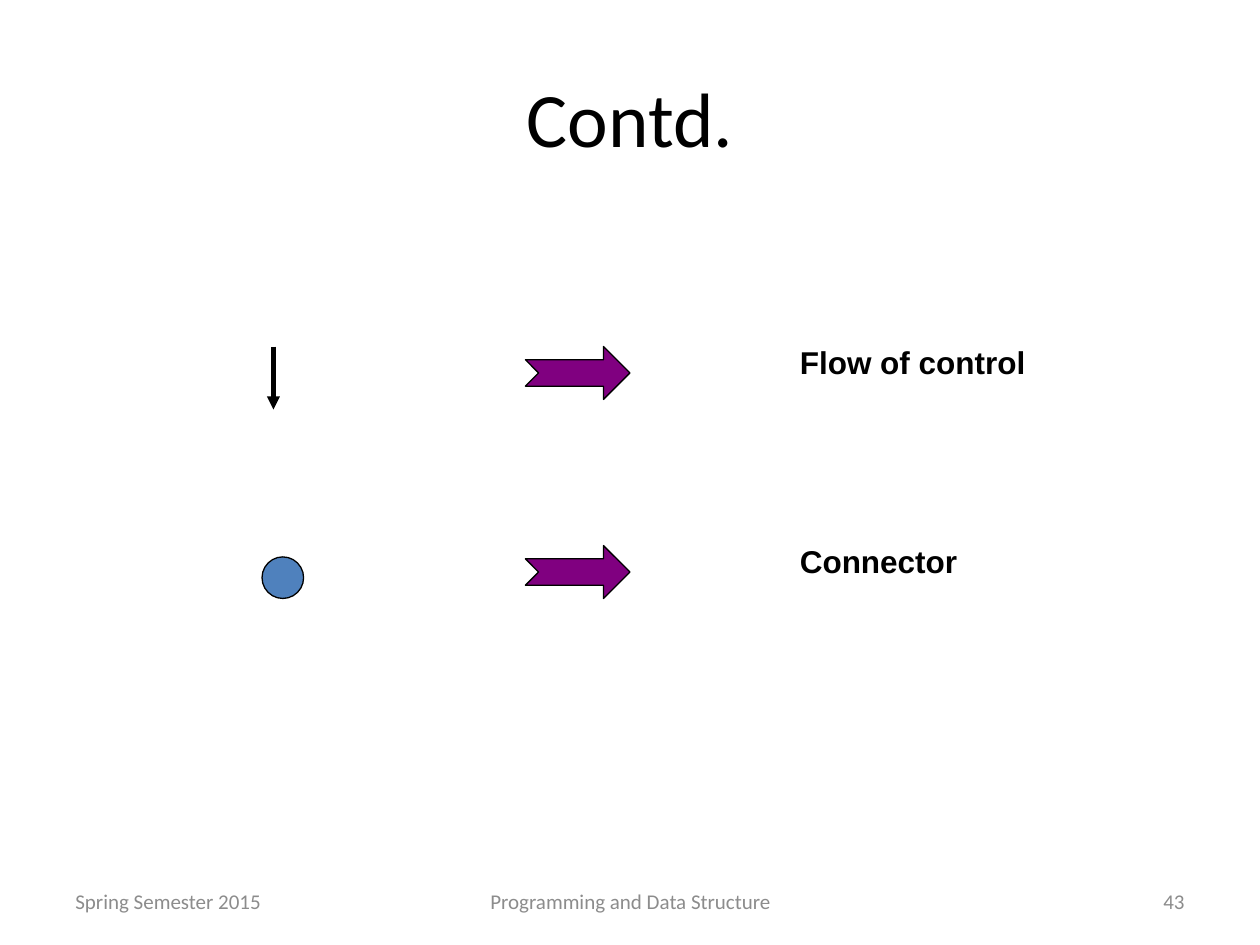
"""Build the flowchart symbols slide: flow of control and connector."""
import pptx
import pptx.dml.color
import pptx.enum.shapes
import pptx.enum.text
import pptx.oxml.ns
import pptx.util
from lxml import etree

Inches = pptx.util.Inches
Pt = pptx.util.Pt
ALIGN = pptx.enum.text.PP_ALIGN
ANCHOR = pptx.enum.text.MSO_ANCHOR
SHAPE = pptx.enum.shapes.MSO_SHAPE
COLORS = {"ink": "000000", "footer": "8C8C8C", "pointer": "800080", "node": "4F81BD"}


def rgb(name):
    """Return the named colour."""
    return pptx.dml.color.RGBColor.from_string(COLORS[name])


def place(shape, left, top, width, height):
    """Move and size a shape, in inches."""
    shape.left, shape.top = Inches(left), Inches(top)
    shape.width, shape.height = Inches(width), Inches(height)


def write(shape, wording, size, font, color="ink", align=ALIGN.LEFT,
          anchor=ANCHOR.TOP, bold=False):
    """Put one formatted paragraph into a shape."""
    frame = shape.text_frame
    frame.text = wording
    frame.word_wrap = True
    frame.vertical_anchor = anchor
    paragraph = frame.paragraphs[0]
    paragraph.alignment = align
    run_font = paragraph.runs[0].font
    run_font.size, run_font.name, run_font.bold = Pt(size), font, bold
    run_font.color.rgb = rgb(color)


def add_title(slide, wording):
    """Fill the title placeholder."""
    title = slide.shapes.title
    place(title, 0.5, 0.3, 9, 1.25)
    write(title, wording, 44, "Calibri", align=ALIGN.CENTER, anchor=ANCHOR.MIDDLE)


def add_text(slide, box, wording, size, font, **style):
    """Add a text box at the given place."""
    text_box = slide.shapes.add_textbox(*map(Inches, box))
    write(text_box, wording, size, font, **style)


def add_symbol(slide, preset, box, color):
    """Add a filled, thinly outlined preset shape."""
    symbol = slide.shapes.add_shape(preset, *map(Inches, box))
    symbol.shadow.inherit = False
    symbol.fill.solid()
    symbol.fill.fore_color.rgb = rgb(color)
    symbol.line.color.rgb = rgb("ink")
    symbol.line.width = Pt(0.75)


def add_flow_arrow(slide, x, top, bottom):
    """Add a downward line with a triangular head."""
    flow = slide.shapes.add_connector(
        pptx.enum.shapes.MSO_CONNECTOR.STRAIGHT,
        Inches(x), Inches(top), Inches(x), Inches(bottom))
    flow.line.color.rgb = rgb("ink")
    flow.line.width = Pt(2.5)
    qn = pptx.oxml.ns.qn
    etree.SubElement(flow.line._get_or_add_ln(), qn("a:tailEnd"), type="triangle")
    etree.SubElement(flow._element.spPr, qn("a:effectLst"))


def add_meaning(slide, top, wording, height):
    """Add a pointer and the meaning of the symbol on its left."""
    add_symbol(slide, SHAPE.NOTCHED_RIGHT_ARROW, (4.17, top, 0.83, 0.42), "pointer")
    add_text(slide, (6.25, top - 0.08, 2.17, height), wording, 18, "Arial", bold=True)


def main():
    """Build and save the slide."""
    deck = pptx.Presentation()
    deck.slide_width, deck.slide_height = Inches(10), Inches(7.5)
    slide = deck.slides.add_slide(deck.slide_layouts[5])
    add_title(slide, "Contd.")

    footers = (
        (0.5, 2.33, "Spring Semester 2015", ALIGN.LEFT),
        (3.42, 3.17, "Programming and Data Structure", ALIGN.CENTER),
        (7.17, 2.33, "43", ALIGN.RIGHT),
    )
    for left, width, wording, align in footers:
        add_text(slide, (left, 6.95, width, 0.4), wording, 12, "Calibri",
                 color="footer", align=align, anchor=ANCHOR.MIDDLE)

    add_flow_arrow(slide, 2.17, 2.75, 3.25)
    add_meaning(slide, 2.75, "Flow of control", 0.9)
    add_symbol(slide, SHAPE.FLOWCHART_CONNECTOR, (2.08, 4.42, 0.33, 0.33), "node")
    add_meaning(slide, 4.33, "Connector", 0.5)
    deck.save("out.pptx")


if __name__ == "__main__":
    main()
